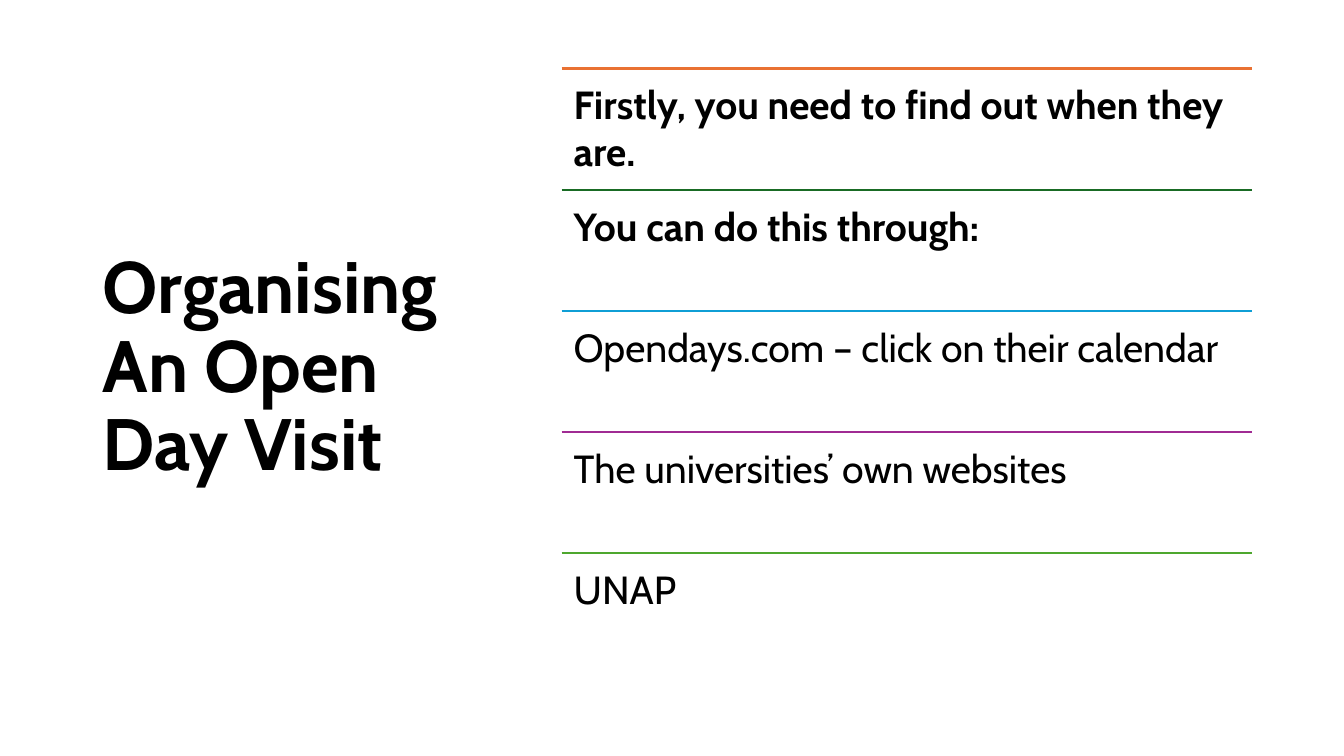
"""Build the slide on organising an open day visit."""
import pptx
import pptx.dml.color
import pptx.enum.shapes
import pptx.enum.text
import pptx.oxml
import pptx.oxml.ns
import pptx.util

Inches = pptx.util.Inches
Pt = pptx.util.Pt

FONT = "Cabin"
COLORS = {
    "text": "000000",
    "orange": "E97132",
    "forest": "196B24",
    "blue": "0F9ED5",
    "purple": "A02B93",
    "green": "4EA72E",
}
STEPS = [
    ("orange", "Firstly, you need to find out when they are.", True),
    ("forest", "You can do this through:", True),
    ("blue", "Opendays.com – click on their calendar", False),
    ("purple", "The universities’ own websites", False),
    ("green", "UNAP", False),
]
LEFT, WIDTH = 5.57, 6.85
FIRST, LAST = 0.68, 5.49
PITCH = (LAST - FIRST) / (len(STEPS) - 1)


def color(name):
    """Return the named colour."""
    return pptx.dml.color.RGBColor.from_string(COLORS[name])


def style(para, size, bold):
    """Format every run of a paragraph."""
    for run in para.runs:
        run.font.name = FONT
        run.font.size = Pt(size)
        run.font.bold = bold
        run.font.color.rgb = color("text")


def add_title(slide, text):
    """Place and fill the title."""
    title = slide.shapes.title
    title.left, title.top = Inches(0.92), Inches(0.61)
    title.width, title.height = Inches(3.69), Inches(6.09)
    frame = title.text_frame
    frame.text = text
    frame.word_wrap = True
    frame.auto_size = pptx.enum.text.MSO_AUTO_SIZE.NONE
    frame.vertical_anchor = pptx.enum.text.MSO_ANCHOR.MIDDLE
    para = frame.paragraphs[0]
    para.alignment = pptx.enum.text.PP_ALIGN.LEFT
    para.line_spacing = 0.9
    style(para, 52, True)


def add_rule(slide, top, name):
    """Draw a coloured line above a step."""
    rule = slide.shapes.add_connector(
        pptx.enum.shapes.MSO_CONNECTOR.STRAIGHT,
        Inches(LEFT), Inches(top), Inches(LEFT + WIDTH), Inches(top))
    rule.line.color.rgb = color(name)
    rule.line.width = Pt(1.5)
    props = rule._element.spPr
    props.append(pptx.oxml.parse_xml(
        f"<a:effectLst {pptx.oxml.ns.nsdecls('a')}/>"))


def add_step(slide, top, text, bold):
    """Write the text of a step."""
    box = slide.shapes.add_textbox(
        Inches(LEFT), Inches(top), Inches(WIDTH), Inches(1.2))
    frame = box.text_frame
    frame.text = text
    frame.word_wrap = True
    frame.margin_left = frame.margin_right = Inches(0.12)
    frame.margin_top = frame.margin_bottom = Inches(0.12)
    style(frame.paragraphs[0], 28, bold)


def main():
    """Build and save the slide."""
    deck = pptx.Presentation()
    deck.slide_width, deck.slide_height = Inches(13.33), Inches(7.5)
    slide = deck.slides.add_slide(deck.slide_layouts.get_by_name("Title Only"))
    add_title(slide, "Organising An Open Day Visit")
    for row, (name, text, bold) in enumerate(STEPS):
        top = FIRST + row * PITCH
        add_rule(slide, top, name)
        add_step(slide, top, text, bold)
    deck.save("out.pptx")


if __name__ == "__main__":
    main()
